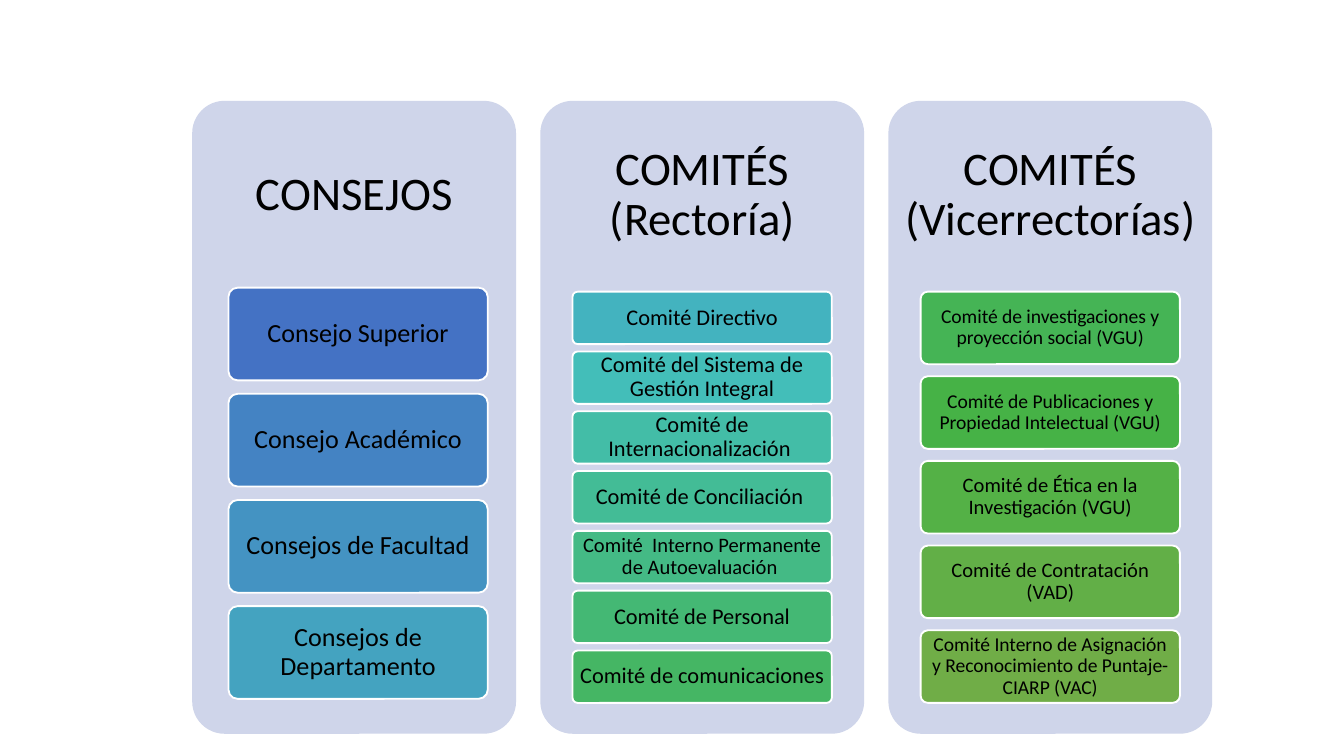
from pptx import Presentation
from pptx.dml.color import RGBColor as RGB
from pptx.enum.shapes import MSO_SHAPE as Shape
from pptx.enum.text import MSO_ANCHOR as Anchor, PP_ALIGN as Align
from pptx.util import Inches, Pt

FONT = "Calibri"
BLACK = RGB(0x00, 0x00, 0x00)
WHITE = RGB(0xFF, 0xFF, 0xFF)
PANEL = RGB(0xCF, 0xD5, 0xEA)

TOP, WIDTH, HEIGHT = 0.75, 2.41, 4.71
LEFT, PITCH = 1.43, 2.59
HEAD = 1.41
ITEM, SPAN = 1.93, 3.06

COLS = [
    ("CONSEJOS", 0.27, 1.39, 0.69, 0.04, [
        ("Consejo Superior", 14, RGB(0x44, 0x72, 0xC4)),
        ("Consejo Académico", 14, RGB(0x44, 0x83, 0xC3)),
        ("Consejos de Facultad", 14, RGB(0x44, 0x93, 0xC2)),
        ("Consejos de Departamento", 14, RGB(0x44, 0xA3, 0xC0)),
    ]),
    ("COMITÉS (Rectoría)", 0.24, 1.42, 0.39, 0.03, [
        ("Comité Directivo", 12, RGB(0x43, 0xB3, 0xBF)),
        ("Comité del Sistema de Gestión Integral", 12, RGB(0x43, 0xBE, 0xB9)),
        ("Comité de Internacionalización ", 12, RGB(0x43, 0xBD, 0xA7)),
        ("Comité de Conciliación ", 12, RGB(0x43, 0xBC, 0x96)),
        ("Comité  Interno Permanente de Autoevaluación ", 11,
         RGB(0x44, 0xBA, 0x85)),
        ("Comité de Personal", 12, RGB(0x44, 0xB8, 0x74)),
        ("Comité de comunicaciones", 12, RGB(0x45, 0xB6, 0x64)),
    ]),
    ("COMITÉS (Vicerrectorías)", 0.24, 1.42, 0.54, 0.04, [
        ("Comité de investigaciones y proyección social (VGU)", 10.5,
         RGB(0x45, 0xB4, 0x55)),
        ("Comité de Publicaciones y Propiedad Intelectual (VGU)", 10.5,
         RGB(0x46, 0xB2, 0x46)),
        ("Comité de Ética en la Investigación (VGU)", 11,
         RGB(0x54, 0xB1, 0x46)),
        ("Comité de Contratación (VAD)", 11, RGB(0x62, 0xAF, 0x47)),
        ("Comité Interno de Asignación y Reconocimiento de Puntaje-CIARP (VAC)",
         10.5, RGB(0x70, 0xAD, 0x47)),
    ]),
]


def write(shape, text, size, side, edge):
    frame = shape.text_frame
    frame.word_wrap = True
    frame.vertical_anchor = Anchor.MIDDLE
    frame.margin_left = frame.margin_right = Inches(side)
    frame.margin_top = frame.margin_bottom = Inches(edge)
    para = frame.paragraphs[0]
    para.alignment = Align.CENTER
    para.line_spacing = 0.9
    run = para.add_run()
    run.text = text
    run.font.name = FONT
    run.font.size = Pt(size)
    run.font.color.rgb = BLACK


def add_card(slide, x, y, w, h, fill):
    card = slide.shapes.add_shape(
        Shape.ROUNDED_RECTANGLE, Inches(x), Inches(y), Inches(w), Inches(h))
    card.adjustments[0] = 0.1
    card.shadow.inherit = False
    card.fill.solid()
    card.fill.fore_color.rgb = fill
    card.line.fill.background()
    return card


def add_column(slide, x, y, w, h, column):
    head, inset, drop, tall, side, items = column
    add_card(slide, x, y, w, h, PANEL)
    box = slide.shapes.add_textbox(
        Inches(x), Inches(y), Inches(w), Inches(HEAD))
    write(box, head, 25, 0.1, 0.1)
    step = (SPAN - tall) / (len(items) - 1)
    for row, (text, size, fill) in enumerate(items):
        card = add_card(slide, x + inset, y + drop + row * step,
                        ITEM, tall, fill)
        card.line.color.rgb = WHITE
        card.line.width = Pt(1)
        write(card, text, size, side, 0.02)


def main():
    deck = Presentation()
    deck.slide_width = Inches(10)
    deck.slide_height = Inches(10 * 9 / 16)
    slide = deck.slides.add_slide(deck.slide_layouts[6])
    for col, column in enumerate(COLS):
        add_column(slide, LEFT + col * PITCH, TOP, WIDTH, HEIGHT, column)
    deck.save("out.pptx")


if __name__ == "__main__":
    main()
